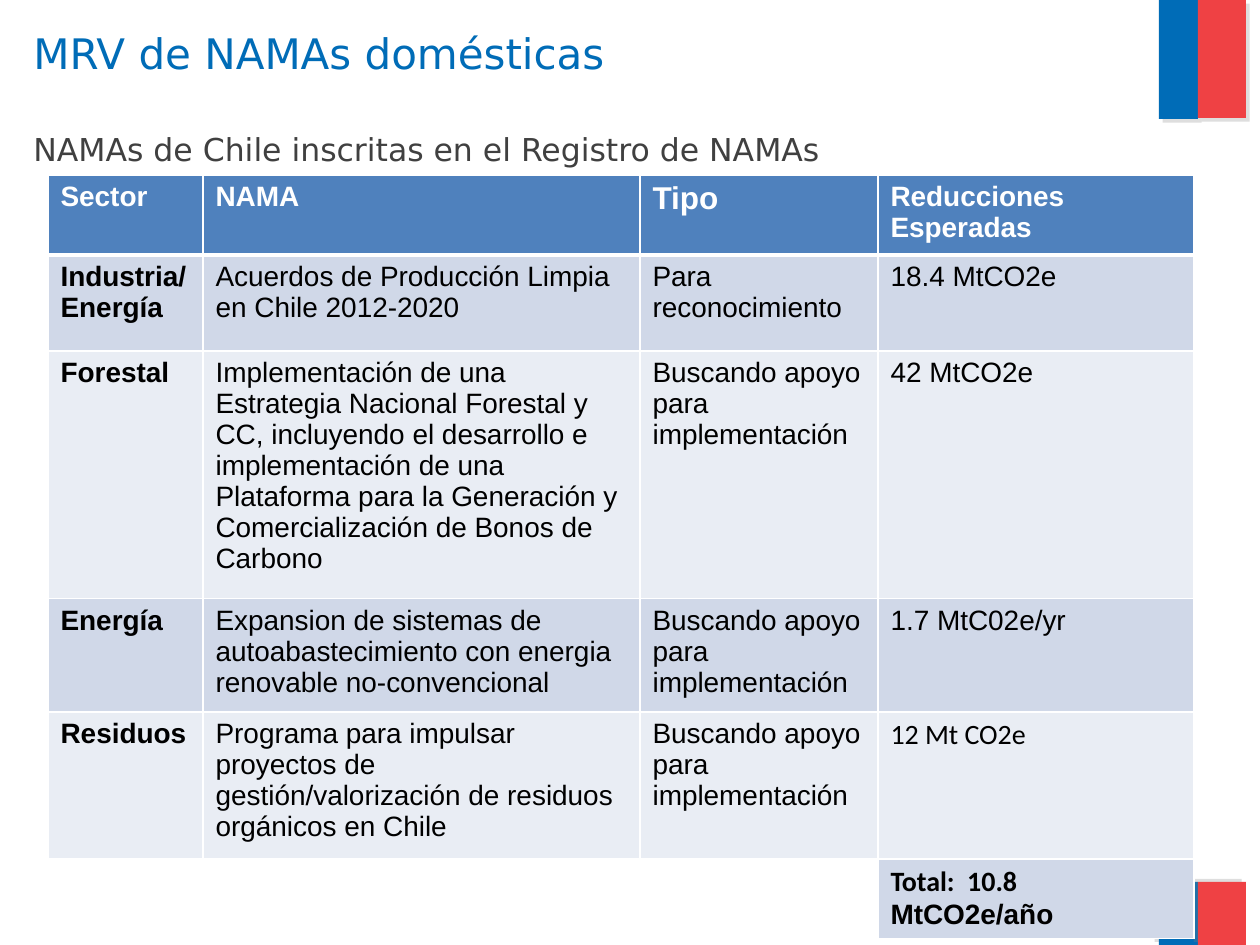
from pptx import Presentation
from pptx.dml.color import RGBColor
from pptx.enum.shapes import MSO_SHAPE as Shape
from pptx.enum.text import MSO_ANCHOR as Anchor
from pptx.oxml import parse_xml
from pptx.oxml.ns import nsdecls
from pptx.util import Pt

SLIDE = (1260, 945)
BLUE, RED, WHITE, BLACK = "006CB7", "EF4144", "FFFFFF", "000000"
HEADER_FILL, BAND_FILLS = "4F81BD", ("D0D8E8", "E9EDF4")

FLAGS = [
    ((1159, -1, 39, 120), BLUE, 45),
    ((1198, 0, 48, 118), RED, 45),
    ((1159, 882, 39, 63), BLUE, 215),
    ((1198, 882, 48, 63), RED, 215),
]
TITLE_BOX = (21, 21, 1125, 115)
TITLE = [
    ("MRV de NAMAs domésticas", dict(size=24, color=BLUE), 0),
    ("NAMAs de Chile inscritas en el Registro de NAMAs", dict(size=18, color="404040"), 30),
]
TABLE_AT = (48, 175)
COLUMNS = (155, 437, 238, 316)
ROWS = (74, 96, 230, 106, 137, 78)
SUPPORT = "Buscando apoyo para implementación"
CELLS = [
    ("Sector", "NAMA", "Tipo", "Reducciones Esperadas"),
    ("Industria/Energía", "Acuerdos de Producción Limpia en Chile 2012-2020",
     "Para reconocimiento", "18.4 MtCO2e"),
    ("Forestal", "Implementación de una Estrategia Nacional Forestal y CC, incluyendo "
     "el desarrollo e implementación de una Plataforma para la Generación y "
     "Comercialización de Bonos de Carbono", SUPPORT, "42 MtCO2e"),
    ("Energía", "Expansion de sistemas de autoabastecimiento con energia renovable "
     "no-convencional", SUPPORT, "1.7 MtC02e/yr"),
    ("Residuos", "Programa para impulsar proyectos de gestión/valorización de residuos "
     "orgánicos en Chile", SUPPORT, "12 Mt CO2e"),
    ("", "", "", "Total:  10.8 |MtCO2e/año"),
]
CALIBRI_TEXTS = ("12 Mt CO2e", "Total:  10.8 ")


def px(value):
    return round(value * 914400 / 126)


def rgb(value):
    return RGBColor.from_string(value)


def add_span(para, text, size, color, name, bold=False):
    span = para.add_run()
    span.text = text
    for key, value in dict(size=Pt(size), name=name, bold=bold).items():
        setattr(span.font, key, value)
    span.font.color.rgb = rgb(color)


def add_flag(page, bounds, color, angle):
    box = page.shapes.add_shape(Shape.RECTANGLE, *map(px, bounds))
    box.fill.solid()
    box.fill.fore_color.rgb = rgb(color)
    box.line.fill.background()
    box.shadow.inherit = False
    box.shadow._element.effectLst.append(parse_xml(
        f'<a:outerShdw {nsdecls("a")} blurRad="0" dist="{Pt(3)}" dir="{angle * 60000}" '
        'algn="ctr" rotWithShape="0"><a:srgbClr val="808080"><a:alpha val="25000"/>'
        '</a:srgbClr></a:outerShdw>'))


def add_title(page):
    frame = page.shapes.add_textbox(*map(px, TITLE_BOX)).text_frame
    frame.word_wrap = True
    frame.vertical_anchor = Anchor.TOP
    for index, (text, style, gap) in enumerate(TITLE):
        para = frame.add_paragraph() if index else frame.paragraphs[0]
        para.space_before = Pt(gap)
        add_span(para, text, name="DejaVu Sans", **style)


def set_borders(cell, row):
    widths = dict(L=1, R=1, T=3 if row == 1 else 1, B=3 if row == 0 else 1)
    for index, (side, width) in enumerate(widths.items()):
        cell._tc.get_or_add_tcPr().insert(index, parse_xml(
            f'<a:ln{side} {nsdecls("a")} w="{Pt(width)}"><a:solidFill>'
            f'<a:srgbClr val="{WHITE}"/></a:solidFill></a:ln{side}>'))


def fill_cell(cell, text, row, column):
    header = row == 0
    if text:
        cell.fill.solid()
        cell.fill.fore_color.rgb = rgb(HEADER_FILL if header else BAND_FILLS[(row - 1) % 2])
    else:
        cell.fill.background()
    set_borders(cell, row)
    for part in filter(None, text.split("|")):
        add_span(cell.text_frame.paragraphs[0], part,
                 size=18 if part == "Tipo" else 16,
                 color=WHITE if header else BLACK,
                 name="Calibri" if part in CALIBRI_TEXTS else "Arial",
                 bold=header or column == 0 or row == len(ROWS) - 1)


def add_sector_table(page):
    bounds = (*TABLE_AT, sum(COLUMNS), sum(ROWS))
    table = page.shapes.add_table(len(ROWS), len(COLUMNS), *map(px, bounds)).table
    table.horz_banding = False
    for column, width in zip(table.columns, COLUMNS):
        column.width = px(width)
    for row, height in zip(table.rows, ROWS):
        row.height = px(height)
    for row, texts in enumerate(CELLS):
        for column, text in enumerate(texts):
            fill_cell(table.cell(row, column), text, row, column)


def main():
    deck = Presentation()
    deck.slide_width, deck.slide_height = map(px, SLIDE)
    page = deck.slides.add_slide(deck.slide_layouts[6])
    for flag in FLAGS:
        add_flag(page, *flag)
    add_title(page)
    add_sector_table(page)
    deck.save("out.pptx")


if __name__ == "__main__":
    main()
